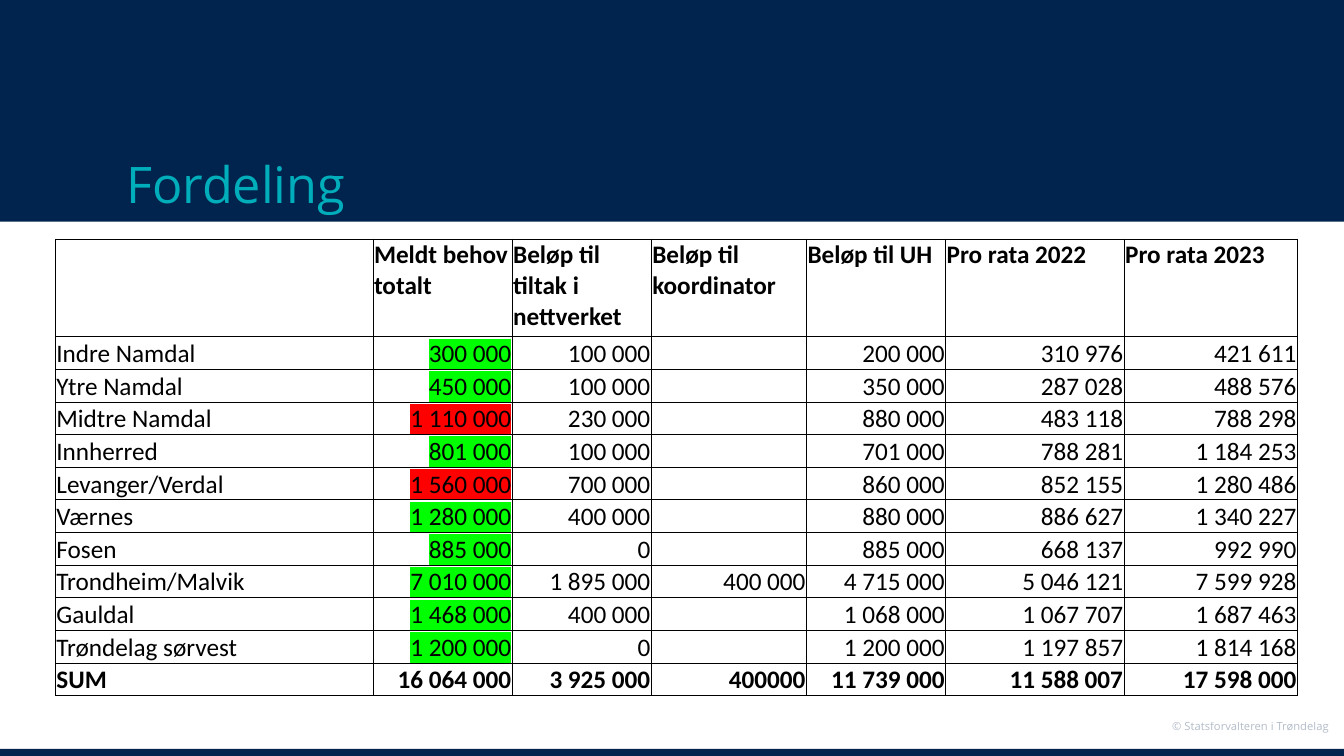
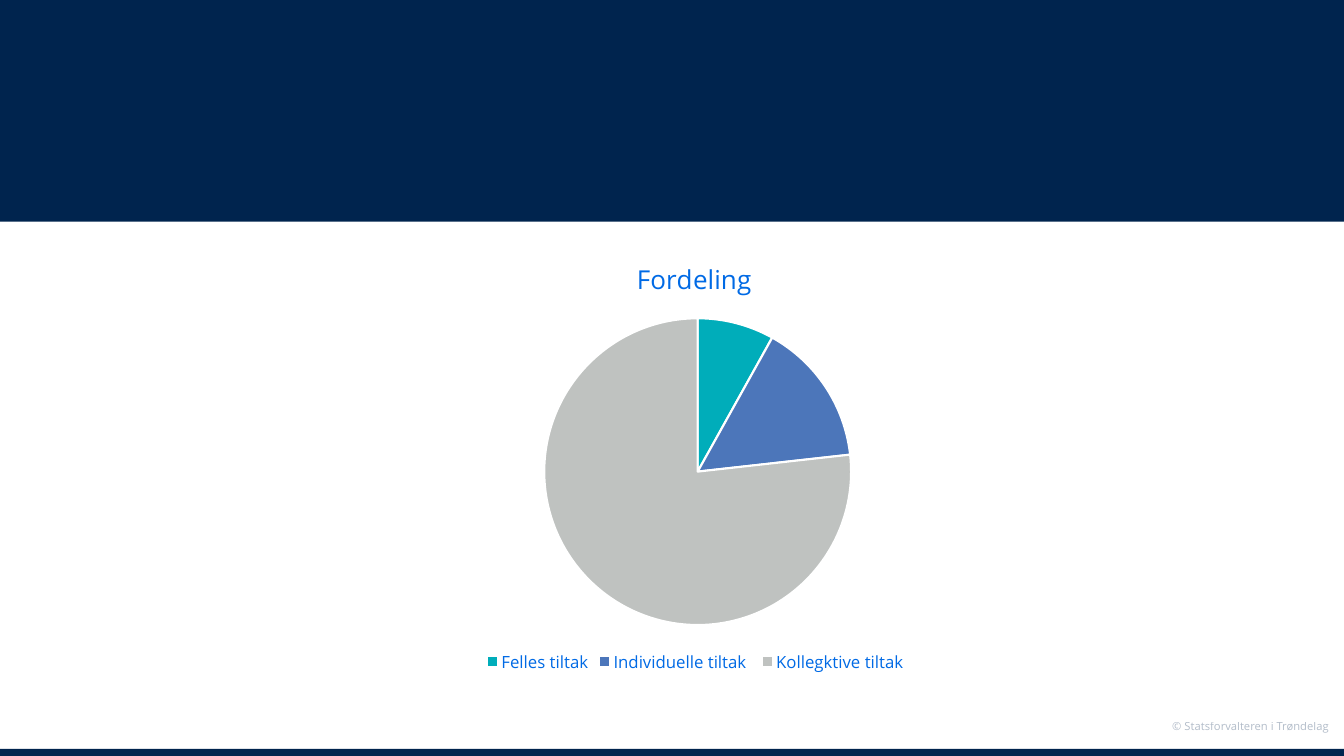
from dataclasses import dataclass
from typing import Any

from lxml.etree import SubElement
from pptx import Presentation
from pptx.chart.data import CategoryChartData
from pptx.dml.color import RGBColor
from pptx.enum.chart import XL_CHART_TYPE, XL_LEGEND_POSITION
from pptx.enum.shapes import MSO_SHAPE
from pptx.enum.text import MSO_ANCHOR, PP_ALIGN
from pptx.oxml import parse_xml
from pptx.oxml.ns import nsdecls, qn
from pptx.util import Emu, Pt

PX = 9144
COLORS = {
    "navy": "00244E",
    "teal": "00ADBA",
    "blue": "4C76BA",
    "gray": "BFC2C0",
    "link": "006AE5",
    "black": "000000",
    "white": "FFFFFF",
    "green": "00FF00",
    "red": "FF0000",
}
HEADING_FONT = "Open Sans"
TABLE_FONT = "Calibri"
FOOTER = "© Statsforvalteren i Trøndelag"
TITLE_ONLY, BLANK = 5, 6


@dataclass(frozen=True)
class Area:
    left: int
    top: int
    width: int
    height: int

    def emu(self) -> tuple[Emu, ...]:
        return tuple(px(side) for side in (self.left, self.top, self.width, self.height))


@dataclass(frozen=True)
class Network:
    name: str
    amounts: tuple[str, ...]
    mark: str = "green"


@dataclass(frozen=True)
class Slice:
    label: str
    value: int
    color: str


BANDS = (Area(0, 743, 1333, 8), Area(0, -11, 1333, 231))
FOOTER_AREA = Area(1144, 709, 184, 24)
TITLE_AREA = Area(115, 95, 1102, 118)
TABLE_AREA = Area(55, 237, 1232, 453)
CHART_AREA = Area(273, 237, 838, 435)
COLUMN_WIDTHS = (315, 138, 138, 154, 138, 177, 172)
HEADER_HEIGHT = 97
HEADINGS = (
    "", "Meldt behov totalt", "Beløp til tiltak i nettverket", "Beløp til koordinator",
    "Beløp til UH", "Pro rata 2022", "Pro rata 2023",
)
NETWORKS = (
    Network("Indre Namdal", ("300 000", "100 000", "", "200 000", "310 976", "421 611")),
    Network("Ytre Namdal", ("450 000", "100 000", "", "350 000", "287 028", "488 576")),
    Network("Midtre Namdal", ("1 110 000", "230 000", "", "880 000", "483 118", "788 298"), "red"),
    Network("Innherred", ("801 000", "100 000", "", "701 000", "788 281", "1 184 253")),
    Network("Levanger/Verdal", ("1 560 000", "700 000", "", "860 000", "852 155", "1 280 486"), "red"),
    Network("Værnes", ("1 280 000", "400 000", "", "880 000", "886 627", "1 340 227")),
    Network("Fosen", ("885 000", "0", "", "885 000", "668 137", "992 990")),
    Network("Trondheim/Malvik", ("7 010 000", "1 895 000", "400 000", "4 715 000", "5 046 121", "7 599 928")),
    Network("Gauldal", ("1 468 000", "400 000", "", "1 068 000", "1 067 707", "1 687 463")),
    Network("Trøndelag sørvest", ("1 200 000", "0", "", "1 200 000", "1 197 857", "1 814 168")),
    Network("SUM", ("16 064 000", "3 925 000", "400000", "11 739 000", "11 588 007", "17 598 000"), ""),
)
SLICES = (
    Slice("Felles tiltak", 8, "teal"),
    Slice("Individuelle tiltak ", 15, "blue"),
    Slice("Kollegktive tiltak ", 76, "gray"),
)


def px(length: int) -> Emu:
    return Emu(length * PX)


def rgb(name: str) -> RGBColor:
    return RGBColor.from_string(COLORS[name])


def assign(target: Any, values: dict[str, Any]) -> None:
    for name, value in values.items():
        setattr(target, name, value)


def style_font(font: Any, name: str, size: float, color: str, bold: bool = False) -> None:
    assign(font, {"name": name, "size": Pt(size), "bold": bold})
    font.color.rgb = rgb(color)


def add_frame(page: Any) -> None:
    for area in BANDS:
        band = page.shapes.add_shape(MSO_SHAPE.RECTANGLE, *area.emu())
        band.shadow.inherit = False
        band.fill.solid()
        band.fill.fore_color.rgb = rgb("navy")
        band.line.fill.background()
    box = page.shapes.add_textbox(*FOOTER_AREA.emu())
    box.text_frame.word_wrap = True
    para = box.text_frame.paragraphs[0]
    para.alignment = PP_ALIGN.RIGHT
    span = para.add_run()
    span.text = FOOTER
    style_font(span.font, HEADING_FONT, 8, "navy")
    for color in span.font.fill._xPr.iter(qn("a:srgbClr")):
        SubElement(color, qn("a:alpha"), val="30000")


def add_title(page: Any, text: str) -> None:
    title = page.shapes.title
    assign(title, dict(zip(("left", "top", "width", "height"), TITLE_AREA.emu())))
    page.shapes._spTree.append(title._element)
    frame = title.text_frame
    assign(frame, {"word_wrap": True, "vertical_anchor": MSO_ANCHOR.BOTTOM, "margin_bottom": px(1)})
    para = frame.paragraphs[0]
    para.alignment = PP_ALIGN.LEFT
    span = para.add_run()
    span.text = text
    style_font(span.font, HEADING_FONT, 36, "teal")


def add_borders(cell: Any) -> None:
    properties = cell._tc.get_or_add_tcPr()
    for index, side in enumerate(("lnL", "lnR", "lnT", "lnB")):
        border = parse_xml(
            f'<a:{side} {nsdecls("a")} w="6350"><a:solidFill>'
            f'<a:srgbClr val="{COLORS["black"]}"/></a:solidFill></a:{side}>'
        )
        properties.insert(index, border)


def highlight(span: Any, color: str) -> None:
    mark = parse_xml(f'<a:highlight {nsdecls("a")}><a:srgbClr val="{COLORS[color]}"/></a:highlight>')
    span.font._element.find(qn("a:solidFill")).addnext(mark)


def fill_cell(cell: Any, text: str, bold: bool, header: bool, number: bool, mark: str) -> None:
    assign(cell, {
        "margin_left": px(1),
        "margin_right": px(1),
        "margin_top": px(1),
        "margin_bottom": 0,
        "vertical_anchor": MSO_ANCHOR.TOP if header else MSO_ANCHOR.BOTTOM,
    })
    cell.fill.background()
    add_borders(cell)
    if not text:
        return
    para = cell.text_frame.paragraphs[0]
    para.alignment = PP_ALIGN.RIGHT if number else PP_ALIGN.LEFT
    span = para.add_run()
    span.text = text
    style_font(span.font, TABLE_FONT, 18, "black", bold)
    if mark:
        highlight(span, mark)


def add_allocation_table(page: Any) -> None:
    table = page.shapes.add_table(len(NETWORKS) + 1, len(HEADINGS), *TABLE_AREA.emu()).table
    assign(table, {"first_row": False, "horz_banding": False})
    for column, width in zip(table.columns, COLUMN_WIDTHS):
        column.width = px(width)
    row_height = Emu(px(TABLE_AREA.height - HEADER_HEIGHT) // len(NETWORKS))
    for index, row in enumerate(table.rows):
        row.height = row_height if index else px(HEADER_HEIGHT)
    for column, heading in enumerate(HEADINGS):
        fill_cell(table.cell(0, column), heading, True, True, False, "")
    for row, network in enumerate(NETWORKS, start=1):
        for column, text in enumerate((network.name, *network.amounts)):
            mark = network.mark if column == 1 else ""
            fill_cell(table.cell(row, column), text, row == len(NETWORKS), False, column > 0, mark)


def add_allocation_chart(page: Any, title: str) -> None:
    data = CategoryChartData()
    data.categories = [item.label for item in SLICES]
    data.add_series(title, [item.value for item in SLICES])
    chart = page.shapes.add_chart(XL_CHART_TYPE.PIE, *CHART_AREA.emu(), data).chart
    style_font(chart.font, HEADING_FONT, 10, "navy")
    assign(chart, {"has_title": True, "has_legend": True})
    span = chart.chart_title.text_frame.paragraphs[0].add_run()
    span.text = title
    style_font(span.font, HEADING_FONT, 18.6, "link")
    assign(chart.legend, {"position": XL_LEGEND_POSITION.BOTTOM, "include_in_layout": False})
    style_font(chart.legend.font, HEADING_FONT, 12, "link")
    plot = chart.plots[0]
    plot.vary_by_categories = True
    for index, item in enumerate(SLICES):
        shape_format = plot.series[0].points[index].format
        shape_format.fill.solid()
        shape_format.fill.fore_color.rgb = rgb(item.color)
        shape_format.line.color.rgb = rgb("white")
        shape_format.line.width = Pt(1.5)


def main() -> None:
    deck = Presentation()
    assign(deck, {"slide_width": px(1333), "slide_height": px(750)})

    table_page = deck.slides.add_slide(deck.slide_layouts[TITLE_ONLY])
    add_frame(table_page)
    add_title(table_page, "Fordeling")
    add_allocation_table(table_page)

    chart_page = deck.slides.add_slide(deck.slide_layouts[BLANK])
    add_frame(chart_page)
    add_allocation_chart(chart_page, "Fordeling ")

    deck.save("out.pptx")


if __name__ == "__main__":
    main()
